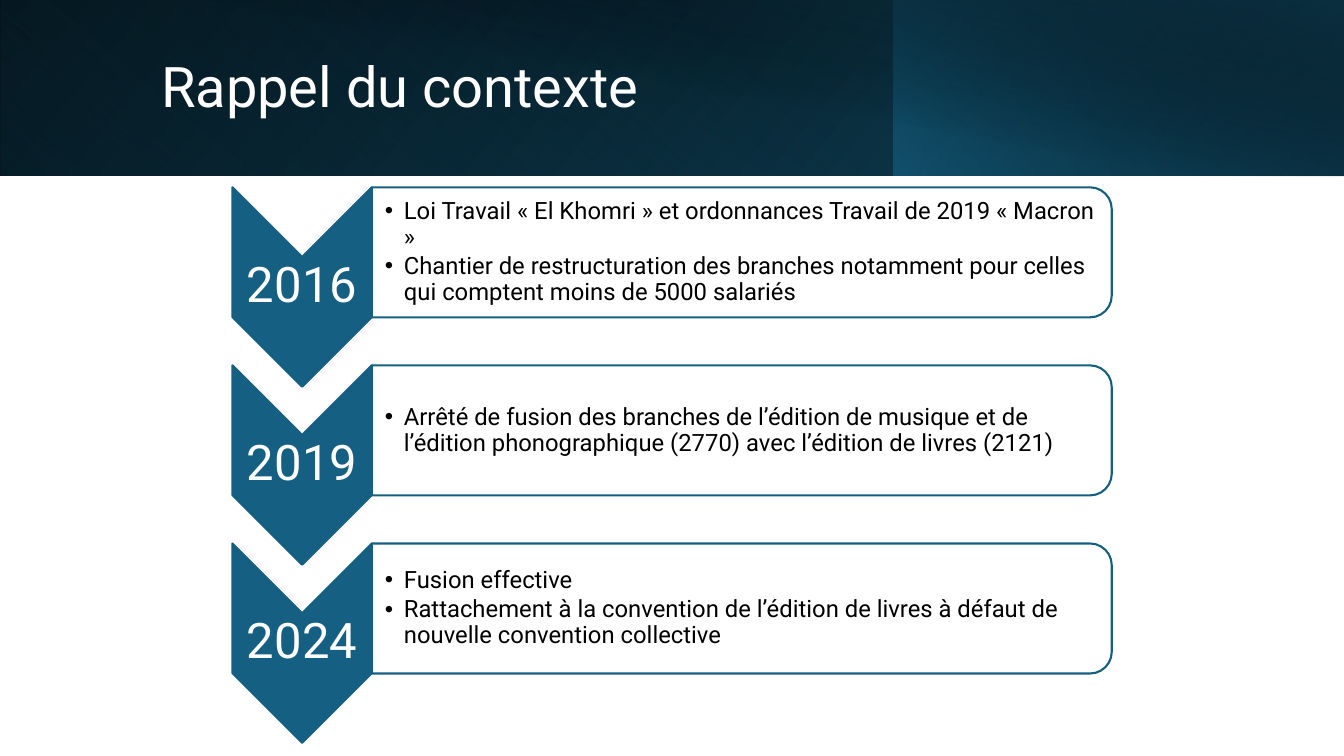
from lxml.etree import SubElement
from pptx import Presentation
from pptx.dml.color import RGBColor
from pptx.enum.shapes import MSO_SHAPE as Preset
from pptx.enum.text import MSO_ANCHOR as Anchor, MSO_AUTO_SIZE as AutoSize, PP_ALIGN as Align
from pptx.oxml.ns import qn
from pptx.util import Pt

COLORS = {"white": "FFFFFF", "black": "000000", "blue": "156082",
          "navy": "0B3041", "ocean": "104862"}
FONT = "Roboto"
BANDS = [
    (0, 960, 125.3, 0, True, 140, [(0, "black", 100), (100, "ocean", 100)]),
    (0, 639, 125.3, 180, True, 230, [(20, "blue", 0), (100, "navy", 55)]),
    (638.6, 321.4, 125.3, 0, True, 220, [(0, "blue", 66), (100, "black", 30)]),
    (36, 924, 126, 0, False, 280, [(50, "black", 0), (99, "navy", 52)]),
]
STEPS = [
    ("2016", ["Loi Travail « El Khomri » et ordonnances Travail de 2019 « Macron »",
              "Chantier de restructuration des branches notamment pour celles "
              "qui comptent moins de 5000 salariés"]),
    ("2019", ["Arrêté de fusion des branches de l’édition de musique et de "
              "l’édition phonographique (2770) avec l’édition de livres (2121)"]),
    ("2024", ["Fusion effective",
              "Rattachement à la convention de l’édition de livres à défaut de "
              "nouvelle convention collective"]),
]


def rgb(name):
    """Return the named colour."""
    return RGBColor.from_string(COLORS[name])


def style_paragraph(paragraph, size, color, align=Align.LEFT):
    """Set the font, colour, alignment and line spacing of a paragraph."""
    paragraph.font.name = FONT
    paragraph.font.size = Pt(size)
    paragraph.font.color.rgb = rgb(color)
    paragraph.alignment = align
    paragraph.line_spacing = 0.9


def add_bullet(paragraph, indent):
    """Give a paragraph a hanging round bullet."""
    properties = paragraph._p.get_or_add_pPr()
    properties.set("marL", str(Pt(indent)))
    properties.set("indent", str(-Pt(indent)))
    SubElement(properties, qn("a:buFont"), typeface="Arial")
    SubElement(properties, qn("a:buChar"), char="•")


def fill_gradient(shape, angle, stops):
    """Fill a shape with a linear gradient of (position, colour, opacity) stops."""
    shape.fill.gradient()
    gradient = shape.element.spPr.find(qn("a:gradFill"))
    for child in list(gradient):
        gradient.remove(child)
    stop_list = SubElement(gradient, qn("a:gsLst"))
    for position, color, opacity in stops:
        stop = SubElement(stop_list, qn("a:gs"), pos=str(position * 1000))
        value = SubElement(stop, qn("a:srgbClr"), val=COLORS[color])
        if opacity < 100:
            SubElement(value, qn("a:alpha"), val=str(opacity * 1000))
    SubElement(gradient, qn("a:lin"), ang=str(angle * 60000), scaled="0")


def add_header(slide, left, top):
    """Layer the gradient bands and put the title over them."""
    for offset, width, height, rotation, flipped, angle, stops in BANDS:
        band = slide.shapes.add_shape(Preset.RECTANGLE, Pt(left + offset), Pt(top),
                                      Pt(width), Pt(height))
        band.shadow.inherit = False
        band.line.fill.background()
        band.rotation = rotation
        if flipped:
            band.element.spPr.find(qn("a:xfrm")).set("flipH", "1")
        fill_gradient(band, angle, stops)
    title = slide.shapes.title
    title.element.getparent().append(title.element)
    title.left, title.top = Pt(left + 108), Pt(top + 23)
    title.width, title.height = Pt(779), Pt(81.4)
    frame = title.text_frame
    frame.text = "Rappel du contexte"
    frame.auto_size = AutoSize.NONE
    frame.vertical_anchor = Anchor.MIDDLE
    style_paragraph(frame.paragraphs[0], 40, "white")


def add_turned_shape(slide, preset, left, top, width, height, fill):
    """Add a shape turned a quarter clockwise that covers the given box."""
    shift = (width - height) / 2
    shape = slide.shapes.add_shape(preset, Pt(left + shift), Pt(top - shift),
                                   Pt(height), Pt(width))
    shape.rotation = 90
    shape.shadow.inherit = False
    shape.fill.solid()
    shape.fill.fore_color.rgb = rgb(fill)
    shape.line.color.rgb = rgb("blue")
    shape.line.width = Pt(1.5)


def add_text_frame(slide, left, top, width, height, inset_left, inset):
    """Add a wrapped, vertically centred text box and return its frame."""
    frame = slide.shapes.add_textbox(Pt(left), Pt(top), Pt(width), Pt(height)).text_frame
    frame.word_wrap = True
    frame.vertical_anchor = Anchor.MIDDLE
    frame.margin_left = Pt(inset_left)
    frame.margin_right = frame.margin_top = frame.margin_bottom = Pt(inset)
    return frame


def add_step(slide, left, top, year, items):
    """Draw one year chevron with its panel of bullets."""
    chevron_width, panel_height = 99.6, 92.9
    add_turned_shape(slide, Preset.CHEVRON, left, top, chevron_width, 142.4, "blue")
    label = add_text_frame(slide, left, top + 49.8, chevron_width, 42.6, 1.6, 1.6)
    label.text = year
    style_paragraph(label.paragraphs[0], 35, "white", Align.CENTER)

    panel_left = left + chevron_width
    add_turned_shape(slide, Preset.ROUND_2_SAME_RECTANGLE, panel_left, top,
                     528.5, panel_height, "white")
    body = add_text_frame(slide, panel_left, top + 4.6, 524, panel_height - 9.2, 9.4, 0.8)
    body.text = "\n".join(items)
    for paragraph in body.paragraphs:
        style_paragraph(paragraph, 17, "black")
        paragraph.space_after = Pt(2.5)
        add_bullet(paragraph, 13.5)


def main():
    """Build the slide and save it."""
    presentation = Presentation()
    presentation.slide_width, presentation.slide_height = Pt(960), Pt(540)
    slide = presentation.slides.add_slide(presentation.slide_layouts[5])
    add_header(slide, 0, 0)
    for index, (year, items) in enumerate(STEPS):
        add_step(slide, 166, 133.8 + index * 127.2, year, items)
    presentation.save("out.pptx")


if __name__ == "__main__":
    main()
